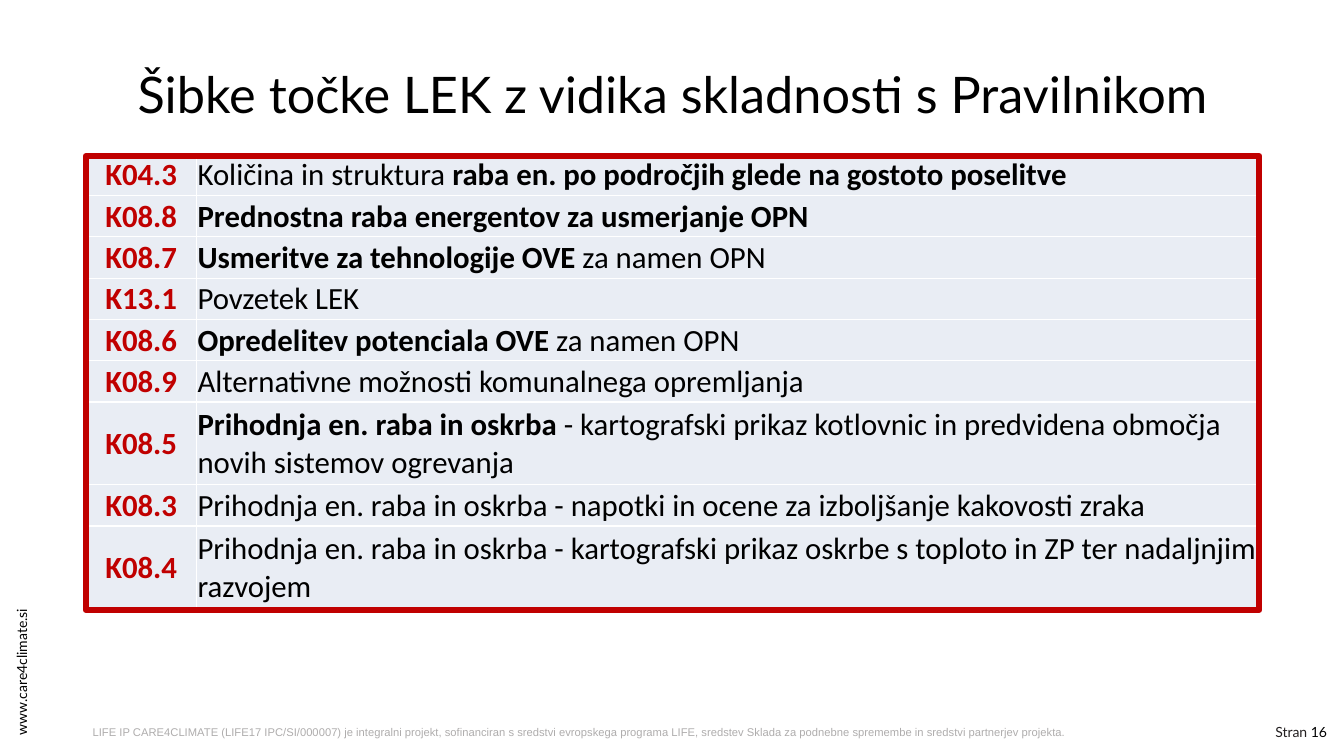
from lxml import etree
from pptx import Presentation
from pptx.dml.color import RGBColor
from pptx.enum.shapes import MSO_SHAPE
from pptx.enum.text import MSO_ANCHOR, PP_ALIGN
from pptx.oxml.ns import qn
from pptx.util import Inches, Pt

LEFT, CENTER, RIGHT = PP_ALIGN.LEFT, PP_ALIGN.CENTER, PP_ALIGN.RIGHT
TOP, MIDDLE = MSO_ANCHOR.TOP, MSO_ANCHOR.MIDDLE
RECTANGLE = MSO_SHAPE.RECTANGLE
BLANK_LAYOUT = 6

COLORS = {
    "text": "000000",
    "red": "C00000",
    "cell": "E9EDF4",
    "border": "FFFFFF",
    "page_label": "231F20",
    "footer": "AFADAD",
}

# Criterion code and its description as (text, bold) spans
CRITERIA = [
    ("K04.3", [("Količina in struktura ", False),
               ("raba en. po področjih glede na gostoto poselitve", True)]),
    ("K08.8", [("Prednostna raba energentov za usmerjanje OPN", True)]),
    ("K08.7", [("Usmeritve za tehnologije OVE ", True), ("za namen OPN", False)]),
    ("K13.1", [("Povzetek LEK", False)]),
    ("K08.6", [("Opredelitev potenciala OVE", True), (" za namen OPN", False)]),
    ("K08.9", [("Alternativne možnosti komunalnega opremljanja", False)]),
    ("K08.5", [("Prihodnja en. raba in oskrba", True),
               (" - kartografski prikaz kotlovnic in predvidena območja "
                "novih sistemov ogrevanja", False)]),
    ("K08.3", [("Prihodnja en. raba in oskrba - napotki in ocene za "
                "izboljšanje kakovosti zraka", False)]),
    ("K08.4", [("Prihodnja en. raba in oskrba - kartografski prikaz oskrbe "
                "s toploto in ZP ter nadaljnjim razvojem", False)]),
]
TWO_LINE_CODES = {"K08.5", "K08.4"}
CODE_WIDTH = 1.1
ROW_HEIGHT = 0.41


def color(name):
    return RGBColor.from_string(COLORS[name])


def add_span(para, text, font_name, size, color_name, bold=False):
    span = para.add_run()
    span.text = text
    formats = {"name": font_name, "size": Pt(size), "bold": bold}
    for key, value in formats.items():
        setattr(span.font, key, value)
    span.font.color.rgb = color(color_name)


def add_text(page, box, spans, font_name, size, align=LEFT, anchor=MIDDLE):
    """Spans are (text, color name) pairs."""
    shape = page.shapes.add_textbox(*map(Inches, box))
    frame = shape.text_frame
    frame.word_wrap = True
    frame.vertical_anchor = anchor
    para = frame.paragraphs[0]
    para.alignment = align
    for text, color_name in spans:
        add_span(para, text, font_name, size, color_name)
    return shape


def add_borders(cell):
    properties = cell._tc.get_or_add_tcPr()
    for side in ("a:lnL", "a:lnR", "a:lnT", "a:lnB"):
        line = etree.SubElement(properties, qn(side), w=str(Pt(1)))
        fill = etree.SubElement(line, qn("a:solidFill"))
        etree.SubElement(fill, qn("a:srgbClr"), val=COLORS["border"])


def fill_cell(cell, spans, align, color_name):
    formats = {
        "margin_left": Inches(0.01),
        "margin_right": Inches(0.01),
        "margin_top": Inches(0.01),
        "margin_bottom": 0,
        "vertical_anchor": MIDDLE,
    }
    for key, value in formats.items():
        setattr(cell, key, value)
    add_borders(cell)
    cell.fill.solid()
    cell.fill.fore_color.rgb = color("cell")
    para = cell.text_frame.paragraphs[0]
    para.alignment = align
    for text, bold in spans:
        add_span(para, text, "Calibri", 22, color_name, bold)


def add_criteria(page, box):
    left, top, width, height = box
    # Table
    table = page.shapes.add_table(len(CRITERIA), 2, *map(Inches, box)).table
    table.columns[0].width = Inches(CODE_WIDTH)
    table.columns[1].width = Inches(width - CODE_WIDTH)
    for index, (code, description) in enumerate(CRITERIA):
        lines = 2 if code in TWO_LINE_CODES else 1
        table.rows[index].height = Inches(lines * ROW_HEIGHT)
        fill_cell(table.cell(index, 0), [(code, True)], CENTER, "red")
        fill_cell(table.cell(index, 1), description, LEFT, "text")
    # Red frame around the table
    frame = page.shapes.add_shape(
        RECTANGLE, *map(Inches, (left, top + 0.02, width, height - 0.03)))
    frame.shadow.inherit = False
    frame.fill.background()
    frame.line.color.rgb = color("red")
    frame.line.width = Pt(4.5)


def add_margins(page, width, height):
    # Web address running up the left edge
    address = add_text(page, (-0.7, height - 1.16, 1.83, 0.27),
                       [("www.care4climate.si", "text")], "Lato", 10)
    address.rotation = 270
    # Page number
    add_text(page, (width - 1.17, height - 0.37, 1.1, 0.27),
             [("Stran ", "page_label"), ("16", "text")], "Lato", 10, RIGHT)
    # Funding note
    note = ("LIFE IP CARE4CLIMATE (LIFE17 IPC/SI/000007) je integralni projekt, "
            "sofinanciran s sredstvi evropskega programa LIFE, sredstev Sklada za "
            "podnebne spremembe in sredstvi partnerjev projekta.")
    add_text(page, (0.82, height - 0.35, 11.56, 0.24), [(note, "footer")],
             "Arial", 8, anchor=TOP)


def main():
    width, height = 13.33, 7.5
    deck = Presentation()
    deck.slide_width, deck.slide_height = Inches(width), Inches(height)
    page = deck.slides.add_slide(deck.slide_layouts[BLANK_LAYOUT])
    add_margins(page, width, height)
    add_text(page, (0.67, 0.3, 12, 1.25),
             [("Šibke točke LEK z vidika skladnosti s Pravilnikom", "text")],
             "Lato", 36, CENTER)
    add_criteria(page, (0.85, 1.53, 11.64, 4.53))
    deck.save("out.pptx")


if __name__ == "__main__":
    main()
